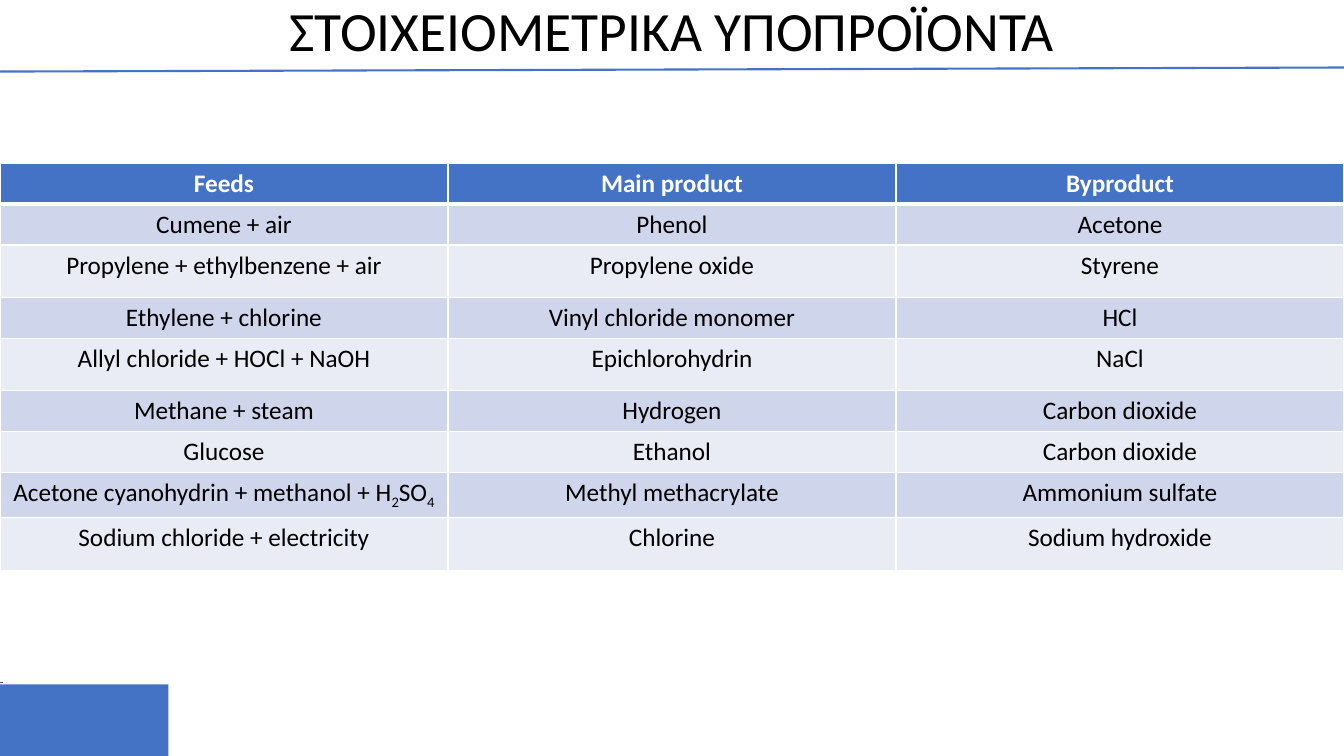
"""Build the slide on stoichiometric byproducts."""
import pptx
import pptx.dml.color
import pptx.enum.shapes
import pptx.enum.text
import pptx.oxml
import pptx.oxml.ns
import pptx.util

Inches = pptx.util.Inches
Pt = pptx.util.Pt
CENTER = pptx.enum.text.PP_ALIGN.CENTER
MIDDLE = pptx.enum.text.MSO_ANCHOR.MIDDLE
COLORS = {
    "blue": "4472C4",
    "slate": "44546A",
    "white": "FFFFFF",
    "black": "000000",
    "band_dark": "CFD5EA",
    "band_light": "E9EBF5",
}
WIDTH = 13.33
ROWS = [
    (0.4, "Feeds", "Main product", "Byproduct"),
    (0.4, "Cumene + air", "Phenol", "Acetone"),
    (0.52, "Propylene + ethylbenzene + air", "Propylene oxide", "Styrene"),
    (0.4, "Ethylene + chlorine", "Vinyl chloride monomer", "HCl"),
    (0.52, "Allyl chloride + HOCl + NaOH", "Epichlorohydrin", "NaCl"),
    (0.4, "Methane + steam", "Hydrogen", "Carbon dioxide"),
    (0.4, "Glucose", "Ethanol", "Carbon dioxide"),
    (0.45, "Acetone cyanohydrin + methanol + H|2|SO|4", "Methyl methacrylate", "Ammonium sulfate"),
    (0.52, "Sodium chloride + electricity", "Chlorine", "Sodium hydroxide"),
]


def rgb(name):
    return pptx.dml.color.RGBColor.from_string(COLORS[name])


def format_font(font, color, **values):
    font.color.rgb = rgb(color)
    for name, value in values.items():
        setattr(font, name, value)


deck = pptx.Presentation()
deck.slide_width = Inches(WIDTH)
deck.slide_height = Inches(7.5)
page = deck.slides.add_slide(deck.slide_layouts[5])

corner = page.shapes.add_shape(
    pptx.enum.shapes.MSO_SHAPE.RECTANGLE, 0, Inches(6.79), Inches(1.67), Inches(0.71)
)
corner.shadow.inherit = False
corner.fill.solid()
corner.fill.fore_color.rgb = rgb("blue")
corner.line.fill.background()

for start_y, end_x, end_y, color, weight in [
    (6.77, 0.03, 6.77, "slate", 0.5),
    (0.71, WIDTH, 0.67, "blue", 1.5),
]:
    rule = page.shapes.add_connector(
        pptx.enum.shapes.MSO_CONNECTOR.STRAIGHT, 0, Inches(start_y), Inches(end_x), Inches(end_y)
    )
    rule.line.color.rgb = rgb(color)
    rule.line.width = Pt(weight)
    rule._element.spPr.append(pptx.oxml.parse_xml(f"<a:effectLst {pptx.oxml.ns.nsdecls('a')}/>"))

title = page.shapes.title
title.left, title.top, title.width, title.height = 0, 0, Inches(WIDTH), Inches(0.66)
title.text_frame.text = "ΣΤΟΙΧΕΙΟΜΕΤΡΙΚΑ ΥΠΟΠΡΟΪΟΝΤΑ"
title.text_frame.auto_size = pptx.enum.text.MSO_AUTO_SIZE.NONE
title.text_frame.vertical_anchor = MIDDLE
heading = title.text_frame.paragraphs[0]
heading.alignment = CENTER
heading.line_spacing = 0.9
format_font(heading.runs[0].font, "black", name="Calibri", size=Pt(39.6))

table = page.shapes.add_table(
    len(ROWS), 3, 0, Inches(1.62), Inches(WIDTH), Inches(sum(row[0] for row in ROWS))
).table
for row_index, (height, *texts) in enumerate(ROWS):
    table.rows[row_index].height = Inches(height)
    is_header = row_index == 0
    band = "band_dark" if row_index % 2 else "band_light"
    for column_index, text in enumerate(texts):
        cell = table.cell(row_index, column_index)
        para = cell.text_frame.paragraphs[0]
        para.alignment = CENTER
        for piece_index, piece in enumerate(text.split("|")):
            span = para.add_run()
            span.text = piece
            format_font(
                span.font, "white" if is_header else "black",
                name="Calibri", size=Pt(18), bold=is_header,
            )
            if piece_index % 2:
                span._r.get_or_add_rPr().set("baseline", "-25000")
        for side in ("lnL", "lnR", "lnT", "lnB"):
            thick = (is_header and side == "lnB") or (row_index == 1 and side == "lnT")
            cell._tc.get_or_add_tcPr().append(pptx.oxml.parse_xml(
                f'<a:{side} {pptx.oxml.ns.nsdecls("a")} w="{Pt(3 if thick else 1)}">'
                f'<a:solidFill><a:srgbClr val="{COLORS["white"]}"/></a:solidFill></a:{side}>'
            ))
        cell.fill.solid()
        cell.fill.fore_color.rgb = rgb("blue" if is_header else band)

deck.save("out.pptx")
